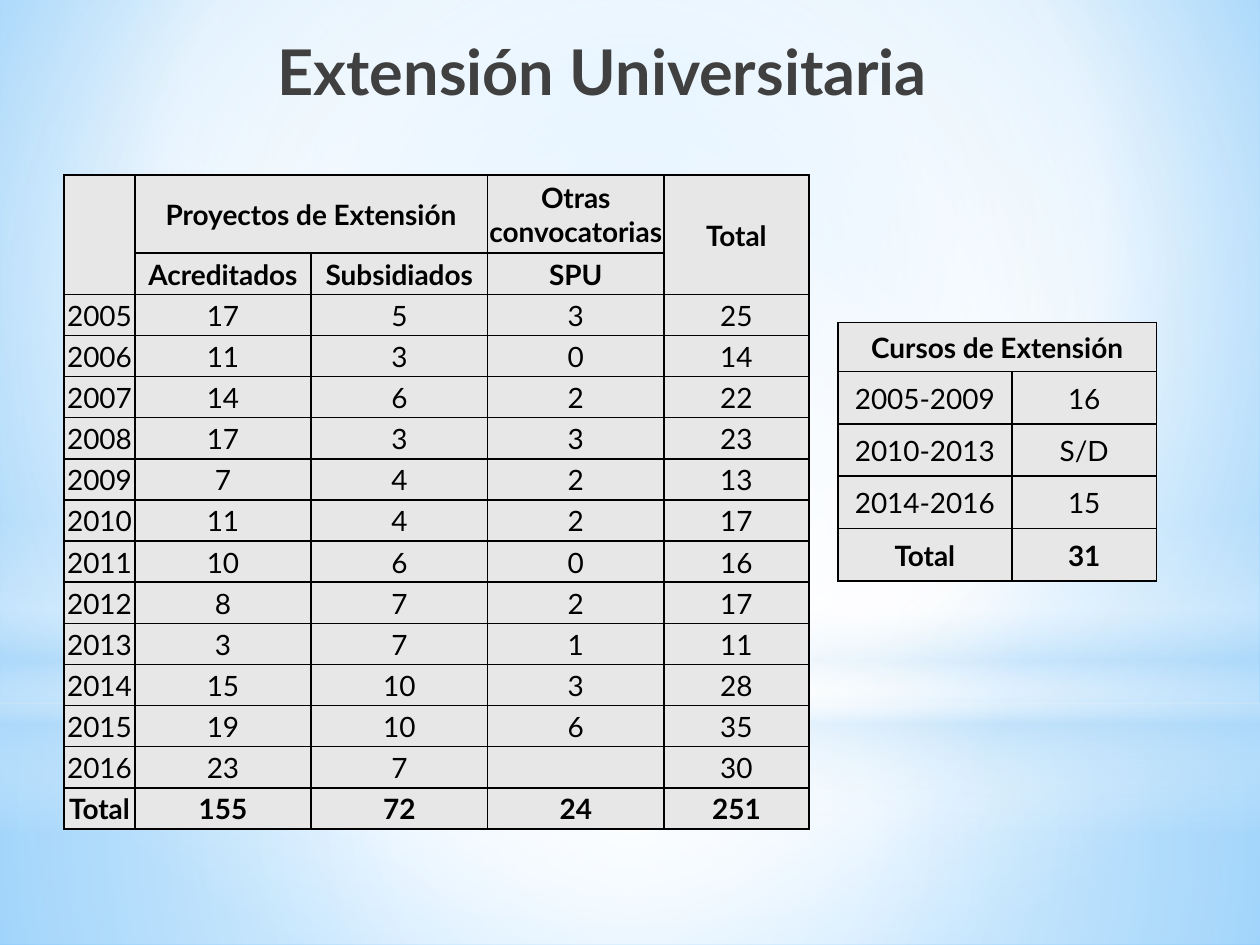
from dataclasses import dataclass
from typing import NamedTuple

from lxml import etree
from pptx import Presentation
from pptx.dml.color import RGBColor
from pptx.enum.shapes import MSO_SHAPE as Preset
from pptx.enum.text import MSO_ANCHOR as Anchor, PP_ALIGN as Align
from pptx.oxml import parse_xml
from pptx.oxml.ns import nsdecls, qn
from pptx.util import Inches, Pt

FONT = "Lato"
BLACK = RGBColor(0x00, 0x00, 0x00)
TITLE_GRAY = RGBColor(0x40, 0x40, 0x40)
CELL_GRAY = RGBColor(0xE7, 0xE7, 0xE7)
WHITE = RGBColor(0xFF, 0xFF, 0xFF)
PALE_BLUE = RGBColor(0xB4, 0xDC, 0xFA)
SKY_BLUE = RGBColor(0x9E, 0xD5, 0xFF)
DEEP_BLUE = RGBColor(0x5B, 0xB9, 0xFF)


class Stop(NamedTuple):
    position: int
    color: RGBColor
    opacity: int = 100


@dataclass
class Glow:
    preset: Preset
    top: float
    height: float
    stops: list[Stop]
    focus: tuple[int, int, int, int] | None = (50, 50, 50, 50)


@dataclass
class Grid:
    left: float
    top: float
    columns: list[float]
    heights: list[float]
    rows: list[list[str]]
    header_rows: int
    merges: list[tuple[int, int, int, int]]


GLOWS = [
    Glow(Preset.RECTANGLE, 5.58, 1.92,
         [Stop(0, WHITE, 91), Stop(37, WHITE, 76), Stop(100, PALE_BLUE, 79)]),
    Glow(Preset.RECTANGLE, 0, 5.58,
         [Stop(0, WHITE, 89), Stop(48, WHITE, 62), Stop(100, PALE_BLUE, 79)]),
    Glow(Preset.RECTANGLE, 4.12, 2.5,
         [Stop(0, WHITE, 0), Stop(29, WHITE, 30), Stop(45, PALE_BLUE, 40),
          Stop(55, WHITE, 26), Stop(65, PALE_BLUE, 60), Stop(100, WHITE, 0)],
         focus=None),
    Glow(Preset.OVAL, 1.75, 5.58, [Stop(0, WHITE), Stop(56, WHITE, 0)]),
]

PROJECTS = Grid(
    0.51, 1.39, [0.56, 1.4, 1.4, 1.4, 1.15], [0.62] + [4.57 / 14] * 14,
    [
        ["", "Proyectos de Extensión", "", "Otras convocatorias", "Total"],
        ["", "Acreditados", "Subsidiados", "SPU", ""],
        ["2005", "17", "5", "3", "25"],
        ["2006", "11", "3", "0", "14"],
        ["2007", "14", "6", "2", "22"],
        ["2008", "17", "3", "3", "23"],
        ["2009", "7", "4", "2", "13"],
        ["2010", "11", "4", "2", "17"],
        ["2011", "10", "6", "0", "16"],
        ["2012", "8", "7", "2", "17"],
        ["2013", "3", "7", "1", "11"],
        ["2014", "15", "10", "3", "28"],
        ["2015", "19", "10", "6", "35"],
        ["2016", "23", "7", "", "30"],
        ["Total", "155", "72", "24", "251"],
    ],
    header_rows=2,
    merges=[(0, 0, 1, 0), (0, 1, 0, 2), (0, 4, 1, 4)],
)
COURSES = Grid(
    6.65, 2.56, [1.38, 1.15], [0.39] + [0.415] * 4,
    [
        ["Cursos de Extensión", ""],
        ["2005-2009", "16"],
        ["2010-2013", "S/D"],
        ["2014-2016", "15"],
        ["Total", "31"],
    ],
    header_rows=1,
    merges=[(0, 0, 0, 1)],
)


def set_gradient(fill, parent, stops: list[Stop], focus) -> None:
    """Swap the solid fill of an element for a circular or vertical gradient."""
    fill.solid()
    gradient = parse_xml(f'<a:gradFill {nsdecls("a")} rotWithShape="1"><a:gsLst/></a:gradFill>')
    for stop in stops:
        mark = etree.SubElement(gradient[0], qn("a:gs"), pos=str(stop.position * 1000))
        color = etree.SubElement(mark, qn("a:srgbClr"), val=str(stop.color))
        if stop.opacity < 100:
            etree.SubElement(color, qn("a:alpha"), val=str(stop.opacity * 1000))
    if focus:
        circle = etree.SubElement(gradient, qn("a:path"), path="circle")
        sides = {side: str(value * 1000) for side, value in zip("ltrb", focus)}
        etree.SubElement(circle, qn("a:fillToRect"), sides)
    else:
        etree.SubElement(gradient, qn("a:lin"), ang="5400000", scaled="0")
    parent.replace(parent.find(qn("a:solidFill")), gradient)


def add_glow(slide, glow: Glow) -> None:
    shape = slide.shapes.add_shape(
        glow.preset, 0, Inches(glow.top), Inches(10), Inches(glow.height))
    shape.shadow.inherit = False
    shape.line.fill.background()
    set_gradient(shape.fill, shape.element.spPr, glow.stops, glow.focus)


def add_run(paragraph, text: str, size: int, color: RGBColor, bold: bool) -> None:
    paragraph.alignment = Align.CENTER
    run = paragraph.add_run()
    run.text = text
    run.font.name = FONT
    run.font.size = Pt(size)
    run.font.bold = bold
    run.font.color.rgb = color


def add_borders(cell) -> None:
    properties = cell._tc.get_or_add_tcPr()
    for index, side in enumerate("LRTB"):
        properties.insert(index, parse_xml(
            f'<a:ln{side} {nsdecls("a")} w="{Pt(1)}"><a:solidFill>'
            f'<a:srgbClr val="{BLACK}"/></a:solidFill></a:ln{side}>'))


def add_grid(slide, grid: Grid) -> None:
    table = slide.shapes.add_table(
        len(grid.rows), len(grid.columns), Inches(grid.left), Inches(grid.top),
        Inches(sum(grid.columns)), Inches(sum(grid.heights))).table
    table.first_row = table.horz_banding = False
    for column, width in zip(table.columns, grid.columns):
        column.width = Inches(width)
    for row, height in zip(table.rows, grid.heights):
        row.height = Inches(height)

    last_row = len(grid.rows) - 1
    for row_index, texts in enumerate(grid.rows):
        bold = row_index < grid.header_rows or row_index == last_row
        for column_index, text in enumerate(texts):
            cell = table.cell(row_index, column_index)
            cell.fill.solid()
            cell.fill.fore_color.rgb = CELL_GRAY
            cell.vertical_anchor = Anchor.MIDDLE
            cell.margin_left = cell.margin_right = cell.margin_top = Inches(0.01)
            cell.margin_bottom = 0
            add_borders(cell)
            if text:
                add_run(cell.text_frame.paragraphs[0], text, 16, BLACK, bold)
    for top, left, bottom, right in grid.merges:
        table.cell(top, left).merge(table.cell(bottom, right))


def main() -> None:
    presentation = Presentation()
    presentation.slide_width, presentation.slide_height = Inches(10), Inches(7.5)
    slide = presentation.slides.add_slide(presentation.slide_layouts[6])

    # Background and soft light
    fill = slide.background.fill
    fill.solid()
    set_gradient(fill, next(slide.element.iter(qn("p:bgPr"))),
                 [Stop(0, SKY_BLUE), Stop(60, WHITE), Stop(100, DEEP_BLUE)],
                 (20, 10, 20, 60))
    for glow in GLOWS:
        add_glow(slide, glow)

    # Title
    title = slide.shapes.add_textbox(Inches(1.22), Inches(0.21), Inches(7.12), Inches(1.25))
    title.text_frame.word_wrap = True
    add_run(title.text_frame.paragraphs[0], "Extensión Universitaria", 36, TITLE_GRAY, True)

    # Tables
    for grid in (PROJECTS, COURSES):
        add_grid(slide, grid)

    presentation.save("out.pptx")


if __name__ == "__main__":
    main()
